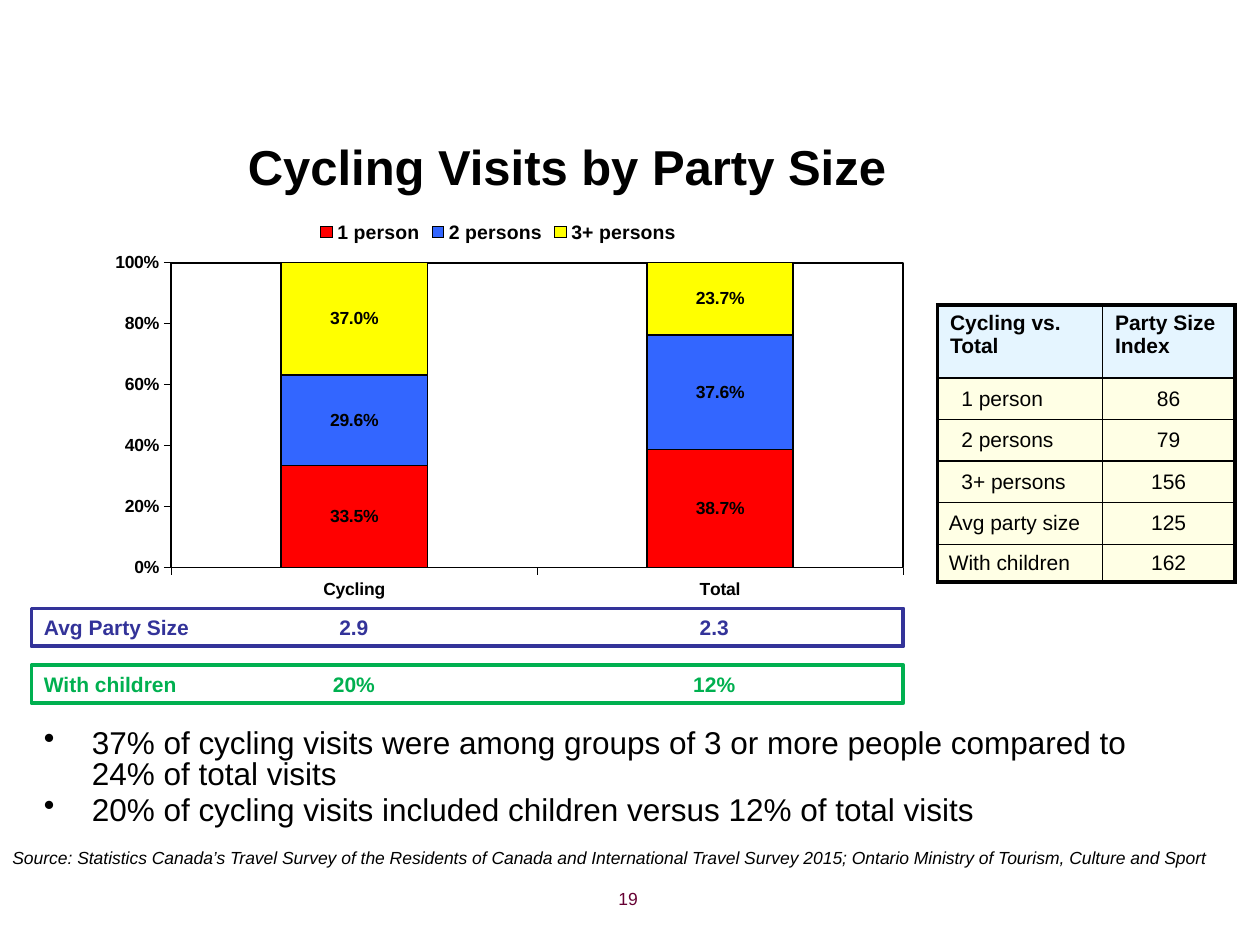
from dataclasses import dataclass

from lxml.etree import SubElement
from pptx import Presentation
from pptx.chart.data import CategoryChartData
from pptx.dml.color import RGBColor
from pptx.enum.chart import XL_CHART_TYPE, XL_LEGEND_POSITION, XL_TICK_MARK
from pptx.enum.shapes import MSO_SHAPE
from pptx.enum.text import MSO_ANCHOR, PP_ALIGN
from pptx.oxml import parse_xml
from pptx.oxml.ns import nsdecls, qn
from pptx.util import Inches, Pt

COLORS = {
    "black": "000000",
    "red": "FF0000",
    "blue": "3366FF",
    "yellow": "FFFF00",
    "navy": "333399",
    "green": "00B050",
    "header": "CCECFF",
    "body": "FFFFCC",
    "number": "660033",
}
FONT = "Arial"


@dataclass
class Series:
    name: str
    values: tuple
    color: str


@dataclass
class Strip:
    top: float
    label: str
    cycling: str
    total: str
    color: str


@dataclass
class IndexRow:
    label: str
    index: str
    height: float
    indent: float


SERIES = [
    Series("1 person", (0.335, 0.387), "red"),
    Series("2 persons", (0.296, 0.376), "blue"),
    Series("3+ persons", (0.37, 0.237), "yellow"),
]
STRIPS = [
    Strip(4.83, "Avg Party Size", "2.9", "2.3", "navy"),
    Strip(5.28, "With children", "20%", "12%", "green"),
]
INDEX_ROWS = [
    IndexRow("Cycling vs. Total", "Party Size Index", 0.58, 0.1),
    IndexRow("1 person", "86", 0.33, 0.19),
    IndexRow("2 persons", "79", 0.33, 0.19),
    IndexRow("3+ persons", "156", 0.33, 0.19),
    IndexRow("Avg party size", "125", 0.33, 0.09),
    IndexRow("With children", "162", 0.3, 0.09),
]
BULLETS = [
    "37% of cycling visits were among groups of 3 or more people compared to 24% of total visits",
    "20% of cycling visits included children versus 12% of total visits",
]
SOURCE = (
    "Source: Statistics Canada’s Travel Survey of the Residents of Canada and International "
    "Travel Survey 2015; Ontario Ministry of Tourism, Culture and Sport"
)


def rgb(name: str) -> RGBColor:
    return RGBColor.from_string(COLORS[name])


def style_font(font, size: float, color: str = "black", bold: bool = False, italic: bool = False) -> None:
    font.name, font.size, font.bold, font.italic = FONT, Pt(size), bold, italic
    font.color.rgb = rgb(color)


def style_line(line, width: float, color: str = "black") -> None:
    line.color.rgb = rgb(color)
    line.width = Pt(width)


def add_text(slide, left: float, top: float, width: float, height: float, text: str):
    text_frame = slide.shapes.add_textbox(
        Inches(left), Inches(top), Inches(width), Inches(height)).text_frame
    text_frame.word_wrap = True
    text_frame.text = text
    return text_frame


def add_title(slide) -> None:
    title = slide.shapes.title
    title.left, title.top, title.width, title.height = Inches(0), Inches(0.97), Inches(9), Inches(0.69)
    title.text_frame.text = "Cycling Visits by Party Size"
    title.text_frame.vertical_anchor = MSO_ANCHOR.MIDDLE
    paragraph = title.text_frame.paragraphs[0]
    paragraph.alignment = PP_ALIGN.CENTER
    style_font(paragraph.font, 28, bold=True)


def add_bullets(slide) -> None:
    text_frame = add_text(slide, 0.25, 5.75, 8.98, 0.75, "\n".join(BULLETS))
    for position, paragraph in enumerate(text_frame.paragraphs):
        paragraph.line_spacing = 0.8
        if position:
            paragraph.space_before = Pt(3.6)
        properties = paragraph._p.get_or_add_pPr()
        properties.set("marL", str(Inches(0.38)))
        properties.set("indent", str(-Inches(0.38)))
        SubElement(properties, qn("a:buChar"), char="•")
        style_font(paragraph.font, 18)


def set_plot_area(chart) -> None:
    plot_area = chart._chartSpace.chart.plotArea
    for layout in plot_area.findall(qn("c:layout")):
        plot_area.remove(layout)
    places = {"x": 0.105, "y": 0.117, "w": 0.884, "h": 0.637}
    modes = "".join(f'<c:{key}Mode val="edge"/>' for key in "xy")
    values = "".join(f'<c:{key} val="{value}"/>' for key, value in places.items())
    plot_area.insert(0, parse_xml(
        f'<c:layout {nsdecls("c")}><c:manualLayout><c:layoutTarget val="inner"/>'
        f"{modes}{values}</c:manualLayout></c:layout>"))
    plot_area.append(parse_xml(
        f'<c:spPr {nsdecls("c", "a")}><a:noFill/><a:ln w="{Pt(1)}"><a:solidFill>'
        f'<a:srgbClr val="{COLORS["black"]}"/></a:solidFill></a:ln></c:spPr>'))


def add_party_chart(slide) -> None:
    data = CategoryChartData(number_format="0.0%")
    data.categories = ["Cycling", "Total"]
    for series in SERIES:
        data.add_series(series.name, series.values)
    chart = slide.shapes.add_chart(
        XL_CHART_TYPE.COLUMN_STACKED_100,
        Inches(0.67), Inches(1.64), Inches(6.57), Inches(3.8), data).chart
    chart.has_title = False
    style_font(chart.font, 10, bold=True)
    chart.has_legend = True
    chart.legend.position = XL_LEGEND_POSITION.TOP
    chart.legend.include_in_layout = False
    style_font(chart.legend.font, 11.1, bold=True)
    for axis in (chart.category_axis, chart.value_axis):
        axis.has_major_gridlines = False
        axis.major_tick_mark = XL_TICK_MARK.OUTSIDE
        style_font(axis.tick_labels.font, 10, bold=True)
        style_line(axis.format.line, 0.25)
    value_axis = chart.value_axis
    value_axis.minimum_scale, value_axis.maximum_scale, value_axis.major_unit = 0, 1, 0.2
    value_axis.tick_labels.number_format = "0%"
    value_axis.tick_labels.number_format_is_linked = False
    plot = chart.plots[0]
    plot.gap_width, plot.overlap, plot.vary_by_categories = 150, 100, False
    for bars, series in zip(plot.series, SERIES):
        bars.format.fill.solid()
        bars.format.fill.fore_color.rgb = rgb(series.color)
        style_line(bars.format.line, 1)
        labels = bars.data_labels
        labels.show_value = True
        labels.number_format, labels.number_format_is_linked = "0.0%", False
        style_font(labels.font, 10, bold=True)
    set_plot_area(chart)


def add_strip(slide, strip: Strip) -> None:
    shape = slide.shapes.add_shape(
        MSO_SHAPE.RECTANGLE, Inches(0.25), Inches(strip.top), Inches(6.92), Inches(0.3))
    shape.shadow.inherit = False
    shape.fill.background()
    style_line(shape.line, 2.25, strip.color)
    shape.text_frame.vertical_anchor = MSO_ANCHOR.MIDDLE
    paragraph = shape.text_frame.paragraphs[0]
    paragraph.text = "\t".join((strip.label, strip.cycling, strip.total))
    paragraph.alignment = PP_ALIGN.LEFT
    tabs = SubElement(paragraph._p.get_or_add_pPr(), qn("a:tabLst"))
    for position in (2.46, 5.32):
        SubElement(tabs, qn("a:tab"), pos=str(Inches(position)), algn="ctr")
    style_font(paragraph.font, 12, strip.color, bold=True)


def style_cell(cell, fill: str, outer_sides: dict) -> None:
    cell.fill.solid()
    cell.fill.fore_color.rgb = rgb(fill)
    properties = cell._tc.get_or_add_tcPr()
    SubElement(properties.find(".//" + qn("a:srgbClr")), qn("a:alpha"), val="50000")
    for position, (side, outer) in enumerate(outer_sides.items()):
        properties.insert(position, parse_xml(
            f'<a:ln{side} {nsdecls("a")} w="{Pt(2.25 if outer else 1)}"><a:solidFill>'
            f'<a:srgbClr val="{COLORS["black"]}"/></a:solidFill></a:ln{side}>'))


def add_index_table(slide) -> None:
    last = len(INDEX_ROWS) - 1
    table = slide.shapes.add_table(
        len(INDEX_ROWS), 2, Inches(7.44), Inches(2.42), Inches(2.36), Inches(2.2)).table
    table.first_row = table.horz_banding = False
    table.columns[0].width, table.columns[1].width = Inches(1.31), Inches(1.05)
    for row, entry in enumerate(INDEX_ROWS):
        table.rows[row].height = Inches(entry.height)
        header = row == 0
        for column, text in enumerate((entry.label, entry.index)):
            cell = table.cell(row, column)
            cell.text = text
            cell.margin_left = Inches(0.1 if header else 0 if column else entry.indent)
            cell.margin_right = Inches(0.1 if header else 0)
            cell.margin_top = cell.margin_bottom = Inches(0.05 if header else 0)
            cell.vertical_anchor = MSO_ANCHOR.TOP if header else MSO_ANCHOR.MIDDLE
            paragraph = cell.text_frame.paragraphs[0]
            paragraph.alignment = PP_ALIGN.CENTER if column and not header else PP_ALIGN.LEFT
            style_font(paragraph.font, 12, bold=header)
            style_cell(cell, "header" if header else "body",
                       {"L": column == 0, "R": column == 1, "T": header, "B": row == last})


def main() -> None:
    presentation = Presentation()
    presentation.slide_width, presentation.slide_height = Inches(10), Inches(7.5)
    slide = presentation.slides.add_slide(presentation.slide_layouts[5])
    add_title(slide)
    add_bullets(slide)
    add_party_chart(slide)
    for strip in STRIPS:
        add_strip(slide, strip)
    add_index_table(slide)
    source = add_text(slide, 0, 6.67, 9.8, 0.27, SOURCE).paragraphs[0]
    style_font(source.font, 10, italic=True)
    number = add_text(slide, 2.83, 7, 2.33, 0.35, "19").paragraphs[0]
    number.alignment = PP_ALIGN.RIGHT
    style_font(number.font, 10, "number")
    presentation.save("out.pptx")


if __name__ == "__main__":
    main()
